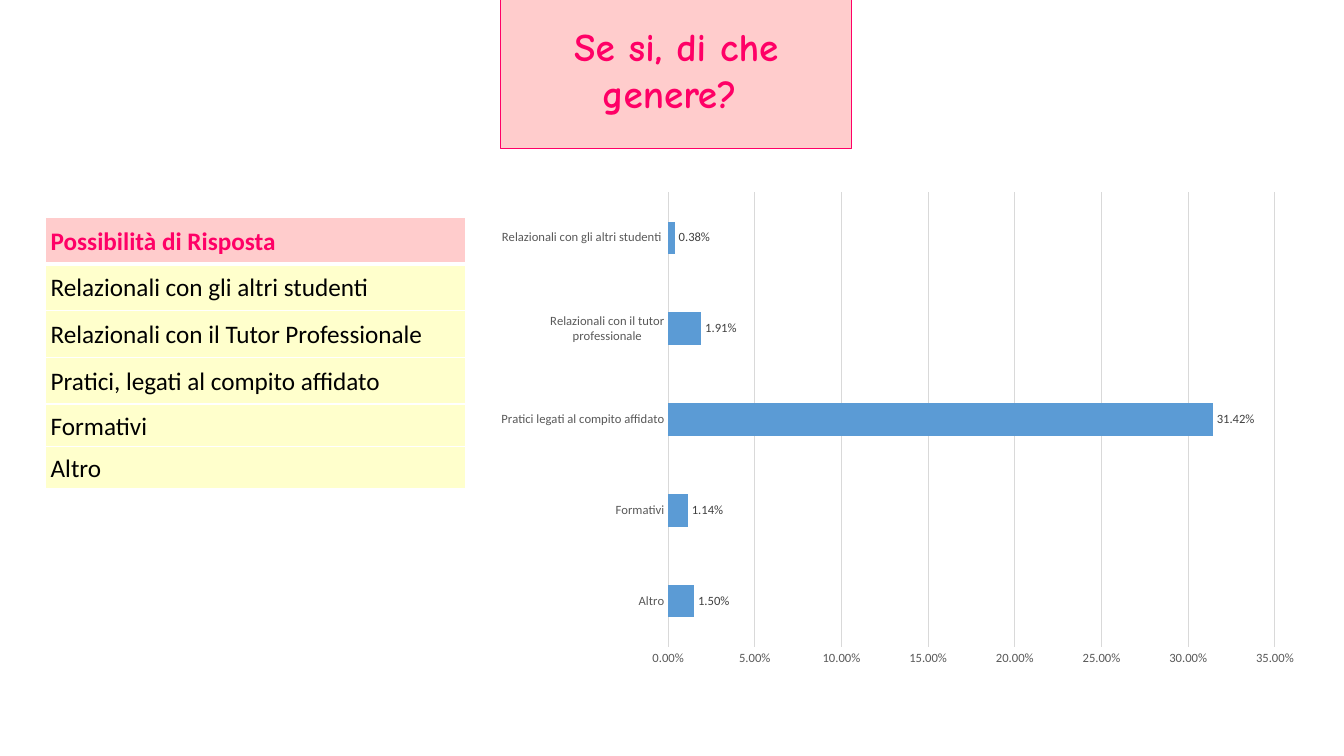
from dataclasses import dataclass

import lxml.etree
import pptx
import pptx.chart.data
import pptx.dml.color
import pptx.enum.chart
import pptx.enum.text
import pptx.oxml.ns
import pptx.util

Pt = pptx.util.Pt
FACE = "Calibri"
COLORS = {
    "pink": "FFCCCC", "rose": "FF0066", "cream": "FFFFCC", "black": "000000",
    "white": "FFFFFF", "blue": "5B9BD5", "grid": "D9D9D9", "gray": "595959",
    "dark": "404040",
}


@dataclass
class Row:
    text: str
    high: float
    fill: str = "cream"
    ink: str = "black"
    bold: bool = False
    base: float = 1


@dataclass
class Bar:
    name: str
    value: float


ROWS = [
    Row("Possibilità di Risposta", 33.4, "pink", "rose", True, 3),
    Row("Relazionali con gli altri studenti", 33.4),
    Row("Relazionali con il Tutor Professionale", 33.4),
    Row("Pratici, legati al compito affidato", 33.4),
    Row("Formativi", 30.2),
    Row("Altro", 30.2),
]
BARS = [
    Bar("Altro", 0.015),
    Bar("Formativi", 0.0114),
    Bar("Pratici legati al compito affidato", 0.3142),
    Bar("Relazionali con il tutor professionale", 0.0191),
    Bar("Relazionali con gli altri studenti ", 0.0038),
]


def color(key: str) -> pptx.dml.color.RGBColor:
    return pptx.dml.color.RGBColor.from_string(COLORS[key])


def style(font, size: float, ink: str, bold: bool = False, face: str = FACE) -> None:
    font.size = Pt(size)
    font.name = face
    font.bold = bold
    font.color.rgb = color(ink)


def paint(fill, key: str) -> None:
    fill.solid()
    fill.fore_color.rgb = color(key)


def stroke(line, key: str) -> None:
    line.color.rgb = color(key)
    line.width = Pt(0.75)


def edge(cell, side: str, width: float) -> None:
    qn = pptx.oxml.ns.qn
    props = cell._tc.get_or_add_tcPr()
    line = lxml.etree.SubElement(props, qn(f"a:ln{side}"), w=str(int(Pt(width))))
    fill = lxml.etree.SubElement(line, qn("a:solidFill"))
    lxml.etree.SubElement(fill, qn("a:srgbClr"), val=COLORS["white"])


def add_title(slide) -> None:
    title = slide.shapes.title
    title.left, title.top, title.width, title.height = map(Pt, (357.8, 12.2, 250.6, 74.9))
    paint(title.fill, "pink")
    stroke(title.line, "rose")
    frame = title.text_frame
    frame.text = "Se si, di che genere? "
    frame.word_wrap = True
    frame.auto_size = pptx.enum.text.MSO_AUTO_SIZE.SHAPE_TO_FIT_TEXT
    para = frame.paragraphs[0]
    para.alignment = pptx.enum.text.PP_ALIGN.CENTER
    style(para.runs[0].font, 28, "rose", True, "Comic Neue")


def add_table(slide, rows: list[Row]) -> None:
    high = sum(row.high for row in rows)
    table = slide.shapes.add_table(
        len(rows), 1, Pt(32.6), Pt(155), Pt(300.2), Pt(high)).table
    for index, row in enumerate(rows):
        table.rows[index].height = Pt(row.high)
        cell = table.cell(index, 0)
        cell.margin_left = cell.margin_right = Pt(3.6)
        cell.margin_top = cell.margin_bottom = Pt(3.6)
        cell.vertical_anchor = pptx.enum.text.MSO_ANCHOR.MIDDLE
        above = rows[index - 1].base if index else 1
        for side, width in zip("LRTB", (1, 1, above, row.base)):
            edge(cell, side, width)
        paint(cell.fill, row.fill)
        cell.text_frame.text = row.text
        para = cell.text_frame.paragraphs[0]
        para.line_spacing = 1.07
        style(para.runs[0].font, 18, row.ink, row.bold)


def add_chart(slide, bars: list[Bar]) -> None:
    kinds = pptx.enum.chart
    data = pptx.chart.data.CategoryChartData(number_format="0.00%")
    data.categories = [bar.name for bar in bars]
    data.add_series("Series 1", [bar.value for bar in bars])
    chart = slide.shapes.add_chart(
        kinds.XL_CHART_TYPE.BAR_CLUSTERED,
        Pt(346.3), Pt(130.3), Pt(589.7), Pt(352.1), data).chart
    chart.has_legend = False
    chart.has_title = False
    style(chart.font, 10, "black")

    for axis in (chart.category_axis, chart.value_axis):
        axis.major_tick_mark = kinds.XL_TICK_MARK.NONE
        axis.minor_tick_mark = kinds.XL_TICK_MARK.NONE
        style(axis.tick_labels.font, 9, "gray")
    stroke(chart.category_axis.format.line, "grid")
    scale = chart.value_axis
    scale.minimum_scale, scale.maximum_scale, scale.major_unit = 0, 0.35, 0.05
    scale.format.line.fill.background()
    stroke(scale.major_gridlines.format.line, "grid")
    scale.tick_labels.number_format = "0.00%"
    scale.tick_labels.number_format_is_linked = False

    plot = chart.plots[0]
    plot.gap_width = 182
    plot.vary_by_categories = False
    series = plot.series[0]
    paint(series.format.fill, "blue")
    series.invert_if_negative = False
    labels = series.data_labels
    labels.show_value = True
    labels.position = kinds.XL_LABEL_POSITION.OUTSIDE_END
    labels.number_format = "0.00%"
    labels.number_format_is_linked = False
    style(labels.font, 9, "dark")


def main() -> None:
    deck = pptx.Presentation()
    deck.slide_width, deck.slide_height = Pt(960), Pt(540)
    slide = deck.slides.add_slide(deck.slide_layouts.get_by_name("Title Only"))
    add_title(slide)
    add_table(slide, ROWS)
    add_chart(slide, BARS)
    deck.save("out.pptx")


if __name__ == "__main__":
    main()
